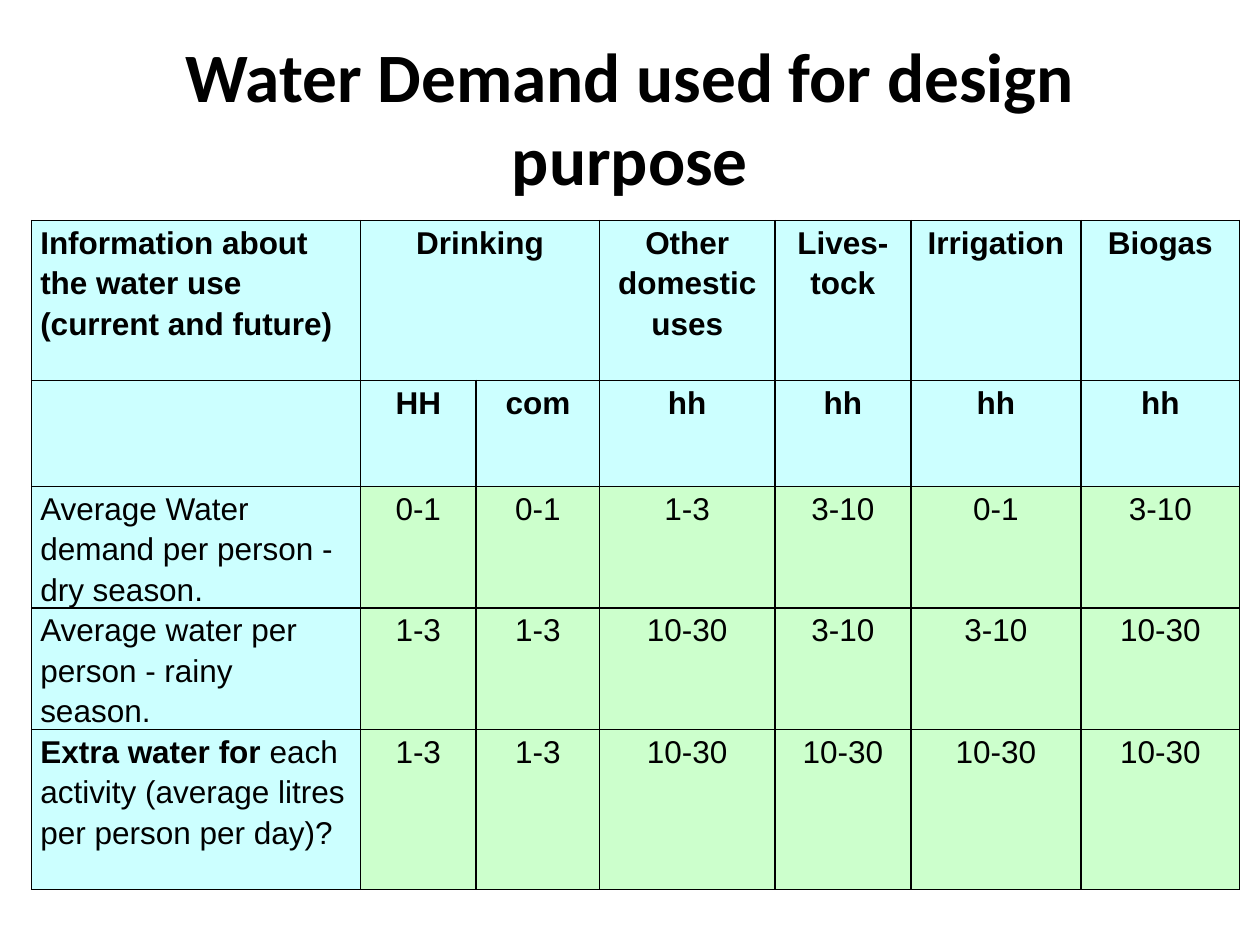
from lxml.etree import SubElement
from pptx import Presentation
from pptx.dml.color import RGBColor
from pptx.enum.text import MSO_ANCHOR as Anchor, MSO_AUTO_SIZE as AutoSize, PP_ALIGN as Align
from pptx.oxml.ns import qn
from pptx.util import Inches, Pt

COLORS = {"ink": "000000", "header": "CCFFFF", "value": "CCFFCC"}
COLUMNS = [2.61, 0.92, 0.98, 1.39, 1.08, 1.35, 1.26]
ROWS = [1.27, 0.84, 0.84, 0.84, 1.27]
HEADER_ROWS = 2

# Each cell is a list of paragraphs; a paragraph is a list of (text, bold) runs
DEMAND = [
    ["Information about the water use (current and future)", "Drinking", "",
     "Other domestic uses", "Lives-\ntock", "Irrigation", "Biogas"],
    ["", "HH", "com", "hh", "hh", "hh", "hh"],
    ["Average Water demand per person - dry season.",
     "0-1", "0-1", "1-3", "3-10", "0-1", "3-10"],
    ["Average water per person - rainy season.",
     "1-3", "1-3", "10-30", "3-10", "3-10", "10-30"],
    ["Extra water for |each activity (average litres per person per day)?",
     "1-3", "1-3", "10-30", "10-30", "10-30", "10-30"],
]


def add_run(paragraph, text, font_name, size, bold):
    run = paragraph.add_run()
    run.text = text
    for name, value in {"name": font_name, "size": Pt(size), "bold": bold}.items():
        setattr(run.font, name, value)
    run.font.color.rgb = RGBColor.from_string(COLORS["ink"])


def add_borders(cell):
    properties = cell._tc.get_or_add_tcPr()
    for side in ("a:lnL", "a:lnR", "a:lnT", "a:lnB"):
        line = SubElement(properties, qn(side), w=str(Pt(1)))
        fill = SubElement(line, qn("a:solidFill"))
        SubElement(fill, qn("a:srgbClr"), val=COLORS["ink"])


presentation = Presentation()
presentation.slide_width, presentation.slide_height = Inches(10), Inches(7.5)
slide = presentation.slides.add_slide(presentation.slide_layouts[5])

# Title
title = slide.shapes.title
title_box = {"left": 0.05, "top": 0.04, "width": 0.9, "height": 1 / 6}
for name, share in title_box.items():
    full = presentation.slide_width if name in ("left", "width") else presentation.slide_height
    setattr(title, name, int(full * share))
frame_format = {"word_wrap": True, "auto_size": AutoSize.NONE,
                "vertical_anchor": Anchor.MIDDLE}
for name, value in frame_format.items():
    setattr(title.text_frame, name, value)
title_paragraph = title.text_frame.paragraphs[0]
title_paragraph.alignment = Align.CENTER
add_run(title_paragraph, "Water Demand used for design purpose", "Calibri", 39.6, True)

# Table grid
table = slide.shapes.add_table(
    len(ROWS), len(COLUMNS), Inches(0.25), Inches(1.75),
    Inches(sum(COLUMNS)), Inches(sum(ROWS))).table
for column, width in zip(table.columns, COLUMNS):
    column.width = Inches(width)
for row, height in zip(table.rows, ROWS):
    row.height = Inches(height)
table.cell(0, 1).merge(table.cell(0, 2))

# Table cells
cell_format = {"margin_left": Inches(0.07), "margin_right": Inches(0.07),
               "margin_top": 0, "margin_bottom": 0, "vertical_anchor": Anchor.TOP}
for row_index, texts in enumerate(DEMAND):
    for column_index, text in enumerate(texts):
        cell = table.cell(row_index, column_index)
        is_header = row_index < HEADER_ROWS
        for name, value in cell_format.items():
            setattr(cell, name, value)
        add_borders(cell)
        cell.fill.solid()
        fill_name = "header" if is_header or column_index == 0 else "value"
        cell.fill.fore_color.rgb = RGBColor.from_string(COLORS[fill_name])
        if not text:
            continue
        for line_index, line in enumerate(text.split("\n")):
            frame = cell.text_frame
            paragraph = frame.add_paragraph() if line_index else frame.paragraphs[0]
            paragraph.alignment = Align.CENTER if column_index else Align.LEFT
            paragraph.line_spacing = 1.15
            # A bar separates a bold lead from the regular text
            lead, bar, rest = line.partition("|")
            add_run(paragraph, lead, "Arial", 18, is_header or bool(bar))
            if rest:
                add_run(paragraph, rest, "Arial", 18, False)

presentation.save("out.pptx")
